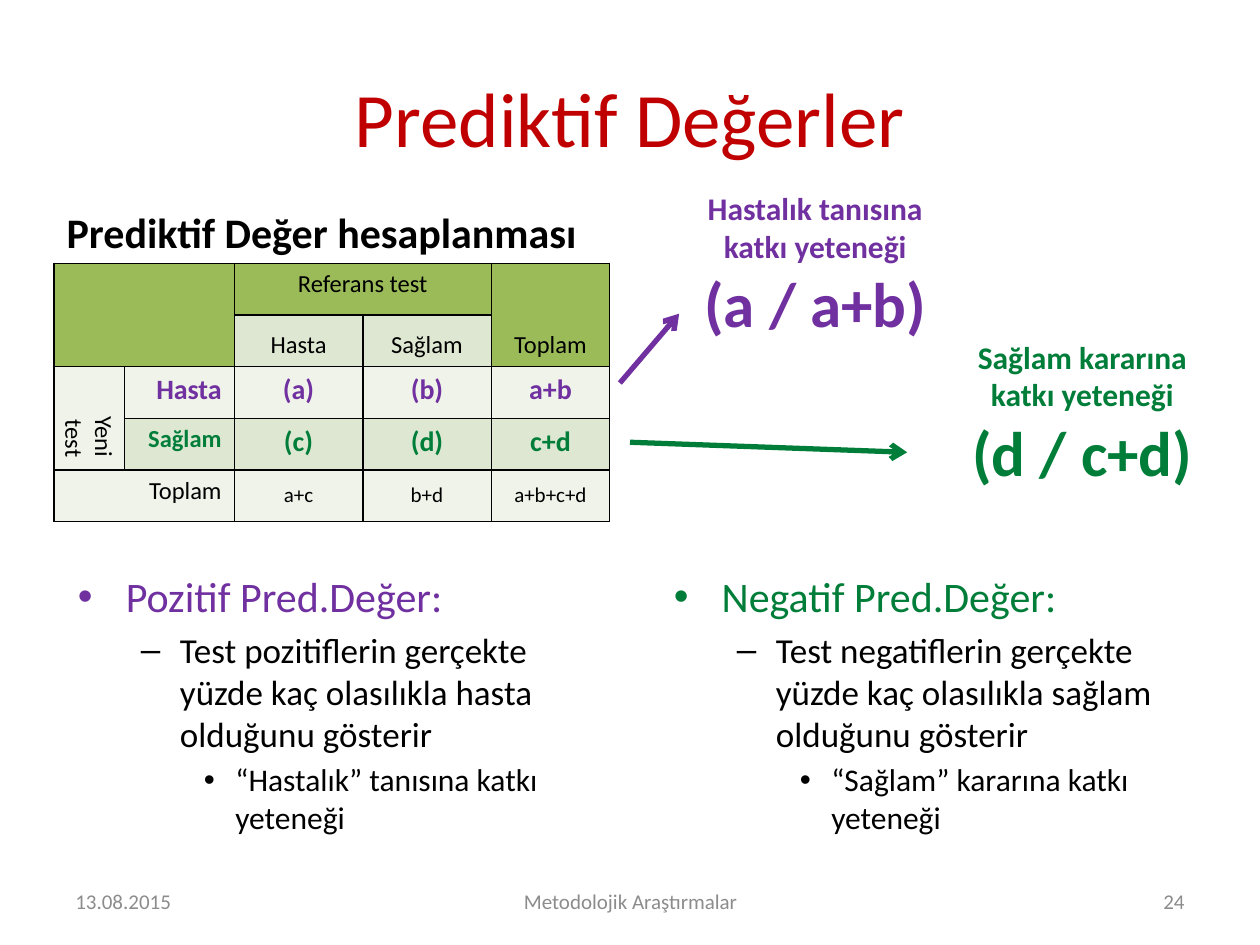
"""Builds the slide on predictive values with its table, formulas and definitions."""
from lxml.etree import SubElement
from pptx import Presentation
from pptx.dml.color import RGBColor
from pptx.enum.shapes import MSO_CONNECTOR
from pptx.enum.text import MSO_ANCHOR, PP_ALIGN
from pptx.oxml.ns import qn
from pptx.util import Inches, Pt

BLACK = RGBColor(0x00, 0x00, 0x00)
RED = RGBColor(0xC0, 0x00, 0x00)
PURPLE = RGBColor(0x70, 0x30, 0xA0)
GREEN = RGBColor(0x00, 0x7E, 0x39)
GRAY = RGBColor(0x8C, 0x8C, 0x8C)
OLIVE = RGBColor(0x9B, 0xBB, 0x59)
BAND = RGBColor(0xDE, 0xE7, 0xD1)
PALE = RGBColor(0xEF, 0xF3, 0xEA)

LEFT, CENTER, RIGHT = PP_ALIGN.LEFT, PP_ALIGN.CENTER, PP_ALIGN.RIGHT
TOP, MIDDLE, BOTTOM = MSO_ANCHOR.TOP, MSO_ANCHOR.MIDDLE, MSO_ANCHOR.BOTTOM


class SlideBuilder:
    def __init__(self, page, font="Calibri"):
        self.page = page
        self.font = font

    def style(self, para, size, color, bold=False, align=LEFT):
        para.alignment = align
        for span in para.runs:
            span.font.name = self.font
            span.font.size = Pt(size)
            span.font.bold = bold
            span.font.color.rgb = color

    def text(self, place, lines, anchor=MIDDLE, align=LEFT, bold=False):
        box = self.page.shapes.add_textbox(*(Inches(length) for length in place))
        frame = box.text_frame
        frame.word_wrap = True
        frame.vertical_anchor = anchor
        frame.text = "\n".join(words for words, size, color in lines)
        for para, (words, size, color) in zip(frame.paragraphs, lines):
            self.style(para, size, color, bold, align)
        return frame

    def bullets(self, place, lines):
        frame = self.text(place, lines, TOP)
        levels = [("•", 0.38, 0.38), ("–", 0.81, 0.31), ("•", 1.25, 0.25)]
        for level, (para, line) in enumerate(zip(frame.paragraphs, lines)):
            mark, margin, hang = levels[level]
            properties = para._p.get_or_add_pPr()
            properties.set("marL", str(Inches(margin)))
            properties.set("indent", str(-Inches(hang)))
            SubElement(properties, qn("a:buFont"), typeface="Arial")
            SubElement(properties, qn("a:buChar"), char=mark)
            para.level = level
            if level:
                para.space_before = Pt(0.2 * line[1])

    def arrow(self, start, end, color):
        points = (Inches(length) for length in start + end)
        line = self.page.shapes.add_connector(MSO_CONNECTOR.STRAIGHT, *points)
        line.line.color.rgb = color
        line.line.width = Pt(3)
        SubElement(line.line._get_or_add_ln(), qn("a:tailEnd"), type="arrow")
        SubElement(line._element.spPr, qn("a:effectLst"))

    def table(self, place, widths, height, fills, merges):
        rows, columns = len(fills), len(widths)
        frame = self.page.shapes.add_table(
            rows, columns, *(Inches(length) for length in place))
        grid = frame.table
        grid.first_row = grid.horz_banding = False
        for column, width in zip(grid.columns, widths):
            column.width = Inches(width)
        for row, colors in zip(grid.rows, fills):
            row.height = Inches(height)
            for cell, color in zip(row.cells, colors):
                self.border(cell)
                cell.fill.solid()
                cell.fill.fore_color.rgb = color
        for first, last in merges:
            grid.cell(*first).merge(grid.cell(*last))
        return grid

    def border(self, cell):
        properties = cell._tc.get_or_add_tcPr()
        for side in ("a:lnL", "a:lnR", "a:lnT", "a:lnB"):
            line = SubElement(properties, qn(side), w=str(Pt(1)))
            fill = SubElement(line, qn("a:solidFill"))
            SubElement(fill, qn("a:srgbClr"), val=str(BLACK))

    def cell(self, cell, words, size=14, color=BLACK, bold=False,
             align=CENTER, anchor=TOP):
        cell.text = words
        cell.vertical_anchor = anchor
        self.style(cell.text_frame.paragraphs[0], size, color, bold, align)


def add_test_table(builder):
    fills = [
        [OLIVE] * 5,
        [OLIVE, OLIVE, BAND, BAND, OLIVE],
        [PALE] * 5,
        [PALE] + [BAND] * 4,
        [PALE] * 5,
    ]
    merges = [((0, 0), (1, 1)), ((0, 2), (0, 3)), ((0, 4), (1, 4)),
              ((2, 0), (3, 0)), ((4, 0), (4, 1))]
    grid = builder.table((0.43, 2.09, 4.41, 2.05), [0.56, 0.87, 1.02, 1.02, 0.94],
                         0.41, fills, merges)

    builder.cell(grid.cell(0, 2), "Referans test")
    builder.cell(grid.cell(0, 4), "Toplam", anchor=BOTTOM)
    for column, words in enumerate(("Hasta", "Sağlam"), 2):
        builder.cell(grid.cell(1, column), words, anchor=BOTTOM)

    builder.cell(grid.cell(2, 0), "Yeni test", align=RIGHT, anchor=MIDDLE)
    grid.cell(2, 0)._tc.get_or_add_tcPr().set("vert", "vert")

    results = [
        (2, "Hasta", 16, PURPLE, ("(a)", "(b)", "a+b")),
        (3, "Sağlam", 14, GREEN, ("(c)", "(d)", "c+d")),
    ]
    for row, label, size, color, values in results:
        builder.cell(grid.cell(row, 1), label, size, color, True, RIGHT)
        for column, words in enumerate(values, 2):
            builder.cell(grid.cell(row, column), words, 16, color, True)

    builder.cell(grid.cell(4, 0), "Toplam", align=RIGHT)
    for column, words in enumerate(("a+c", "b+d", "a+b+c+d"), 2):
        builder.cell(grid.cell(4, column), words, 12, anchor=MIDDLE)


def main():
    deck = Presentation()
    deck.slide_width, deck.slide_height = Inches(10), Inches(7.5)
    builder = SlideBuilder(deck.slides.add_slide(deck.slide_layouts[6]))

    builder.text((0.5, 0.3, 9, 1.25), [("Prediktif Değerler", 44, RED)], align=CENTER)
    builder.text((0.43, 1.39, 4.42, 0.7),
                 [("Prediktif Değer hesaplanması", 24, BLACK)], BOTTOM, bold=True)
    add_test_table(builder)

    definitions = [
        (0.52, PURPLE, "Pozitif Pred.Değer:",
         "Test pozitiflerin gerçekte yüzde kaç olasılıkla hasta olduğunu gösterir",
         "“Hastalık” tanısına katkı yeteneği"),
        (5.25, GREEN, "Negatif Pred.Değer:",
         "Test negatiflerin gerçekte yüzde kaç olasılıkla sağlam olduğunu gösterir",
         "“Sağlam” kararına katkı yeteneği"),
    ]
    for left, color, term, meaning, use in definitions:
        builder.bullets((left, 4.48, 4.33, 2.34),
                        [(term, 24, color), (meaning, 20, BLACK), (use, 18, BLACK)])

    formulas = [
        (5.33, 1.47, PURPLE, "Hastalık tanısına katkı yeteneği", "(a / a+b)"),
        (7.45, 2.65, GREEN, "Sağlam kararına katkı yeteneği", "(d / c+d)"),
    ]
    for left, top, color, label, formula in formulas:
        builder.text((left, top, 2.28, 1.26),
                     [(label, 18, color), (formula, 36, color)],
                     align=CENTER, bold=True)
    builder.arrow((4.92, 3.04), (5.39, 2.49), PURPLE)
    builder.arrow((5, 3.51), (7.2, 3.59), GREEN)

    footers = [(0.5, 2.33, "13.08.2015", LEFT),
               (3.42, 3.17, "Metodolojik Araştırmalar", CENTER),
               (7.17, 2.33, "24", RIGHT)]
    for left, width, words, align in footers:
        builder.text((left, 6.95, width, 0.4), [(words, 12, GRAY)], align=align)

    deck.save("out.pptx")


if __name__ == "__main__":
    main()
